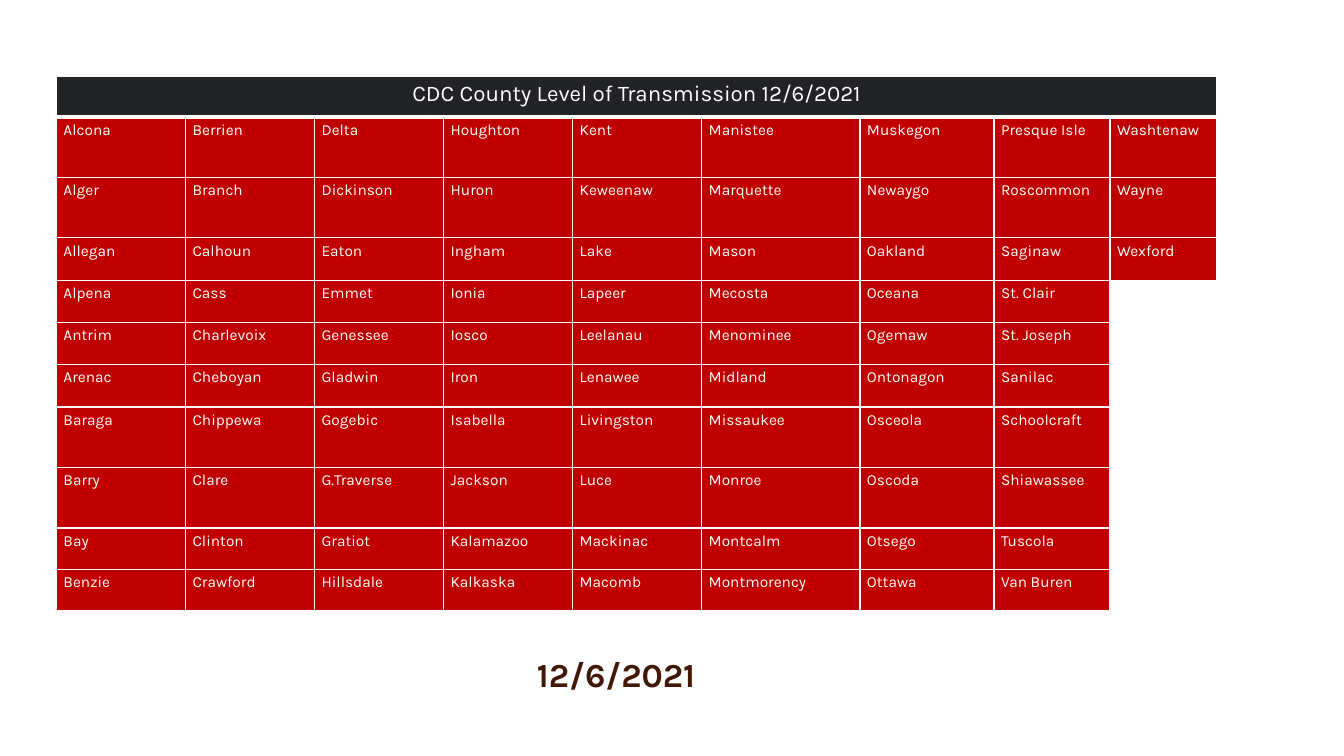
"""Build the slide with the county transmission table."""
import pptx
import pptx.dml.color
import pptx.enum.text
import pptx.oxml
import pptx.oxml.ns
import pptx.util
from pptx.util import Inches

HEADING = "CDC County Level of Transmission 12/6/2021"
DATE = "12/6/2021"
COUNTY_COLUMNS = [
    ["Alcona", "Alger", "Allegan", "Alpena", "Antrim",
     "Arenac", "Baraga", "Barry", "Bay", "Benzie"],
    ["Berrien", "Branch", "Calhoun", "Cass", "Charlevoix",
     "Cheboyan", "Chippewa", "Clare", "Clinton", "Crawford"],
    ["Delta", "Dickinson", "Eaton", "Emmet", "Genessee",
     "Gladwin", "Gogebic", "G.Traverse", "Gratiot", "Hillsdale"],
    ["Houghton", "Huron", "Ingham", "Ionia", "Iosco",
     "Iron", "Isabella", "Jackson", "Kalamazoo", "Kalkaska"],
    ["Kent", "Keweenaw", "Lake", "Lapeer", "Leelanau",
     "Lenawee", "Livingston", "Luce", "Mackinac", "Macomb"],
    ["Manistee", "Marquette", "Mason", "Mecosta", "Menominee",
     "Midland", "Missaukee", "Monroe", "Montcalm", "Montmorency"],
    ["Muskegon", "Newaygo", "Oakland", "Oceana", "Ogemaw",
     "Ontonagon", "Osceola", "Oscoda", "Otsego", "Ottawa"],
    ["Presque Isle", "Roscommon", "Saginaw", "St. Clair", "St. Joseph",
     "Sanilac", "Schoolcraft", "Shiawassee", "Tuscola", "Van Buren"],
    ["Washtenaw", "Wayne", "Wexford"],
]
COLUMN_WIDTHS = [1.28] * 5 + [1.57, 1.33, 1.15, 1.06]
ROW_HEIGHTS = [0.4, 0.6, 0.6, 0.42, 0.42, 0.42, 0.42, 0.6, 0.6, 0.41, 0.41]
TABLE_LEFT, TABLE_TOP = 0.56, 0.76

WHITE, RED, CHARCOAL, BROWN = "FFFFFF", "C00000", "222326", "421804"
HEADING_FONT = {"name": "Karla", "size": pptx.util.Pt(16), "color": WHITE}
COUNTY_FONT = {"name": "Karla", "size": pptx.util.Pt(11), "color": WHITE}
DATE_FONT = {"name": "Karla", "size": pptx.util.Pt(24), "bold": True, "color": BROWN}
CELL_FORMAT = {
    "margin_left": Inches(0.07), "margin_right": Inches(0.07),
    "margin_top": Inches(0.04), "margin_bottom": Inches(0.04),
}
CENTER = pptx.enum.text.PP_ALIGN.CENTER


def color(hex_string):
    return pptx.dml.color.RGBColor.from_string(hex_string)


def write(text_frame, text, font_format, alignment=None):
    paragraph = text_frame.paragraphs[0]
    paragraph.text = text
    paragraph.alignment = alignment
    for name, value in font_format.items():
        if name == "color":
            paragraph.font.color.rgb = color(value)
        else:
            setattr(paragraph.font, name, value)


def format_cell(cell, fill, bottom_width=1):
    for name, value in CELL_FORMAT.items():
        setattr(cell, name, value)
    properties = cell._tc.get_or_add_tcPr()
    for side, width in (("L", 1), ("R", 1), ("T", 1), ("B", bottom_width)):
        properties.append(pptx.oxml.parse_xml(
            f'<a:ln{side} {pptx.oxml.ns.nsdecls("a")} w="{pptx.util.Pt(width)}">'
            f'<a:solidFill><a:srgbClr val="{WHITE}"/></a:solidFill></a:ln{side}>'))
    if fill:
        cell.fill.solid()
        cell.fill.fore_color.rgb = color(fill)
    else:
        cell.fill.background()


def add_county_table(slide):
    table = slide.shapes.add_table(
        len(ROW_HEIGHTS), len(COLUMN_WIDTHS), Inches(TABLE_LEFT), Inches(TABLE_TOP),
        Inches(sum(COLUMN_WIDTHS)), Inches(sum(ROW_HEIGHTS))).table
    table.horz_banding = False
    for column, width in zip(table.columns, COLUMN_WIDTHS):
        column.width = Inches(width)
    for row, height in zip(table.rows, ROW_HEIGHTS):
        row.height = Inches(height)

    heading = table.cell(0, 0)
    heading.merge(table.cell(0, len(COLUMN_WIDTHS) - 1))
    for column_index in range(len(COLUMN_WIDTHS)):
        format_cell(table.cell(0, column_index), CHARCOAL, bottom_width=3)
    write(heading.text_frame, HEADING, HEADING_FONT, CENTER)

    for column_index, counties in enumerate(COUNTY_COLUMNS):
        for row_index in range(1, len(ROW_HEIGHTS)):
            county = counties[row_index - 1] if row_index <= len(counties) else ""
            cell = table.cell(row_index, column_index)
            format_cell(cell, RED if county else None)
            write(cell.text_frame, county, COUNTY_FONT)


def main():
    presentation = pptx.Presentation()
    presentation.slide_width = Inches(13.33)
    presentation.slide_height = Inches(7.5)
    slide = presentation.slides.add_slide(presentation.slide_layouts.get_by_name("Blank"))
    add_county_table(slide)
    date_box = slide.shapes.add_textbox(
        Inches(3.39), Inches(6.44), Inches(5.44), Inches(0.91))
    date_box.text_frame.word_wrap = True
    write(date_box.text_frame, DATE, DATE_FONT, CENTER)
    presentation.save("out.pptx")


if __name__ == "__main__":
    main()
